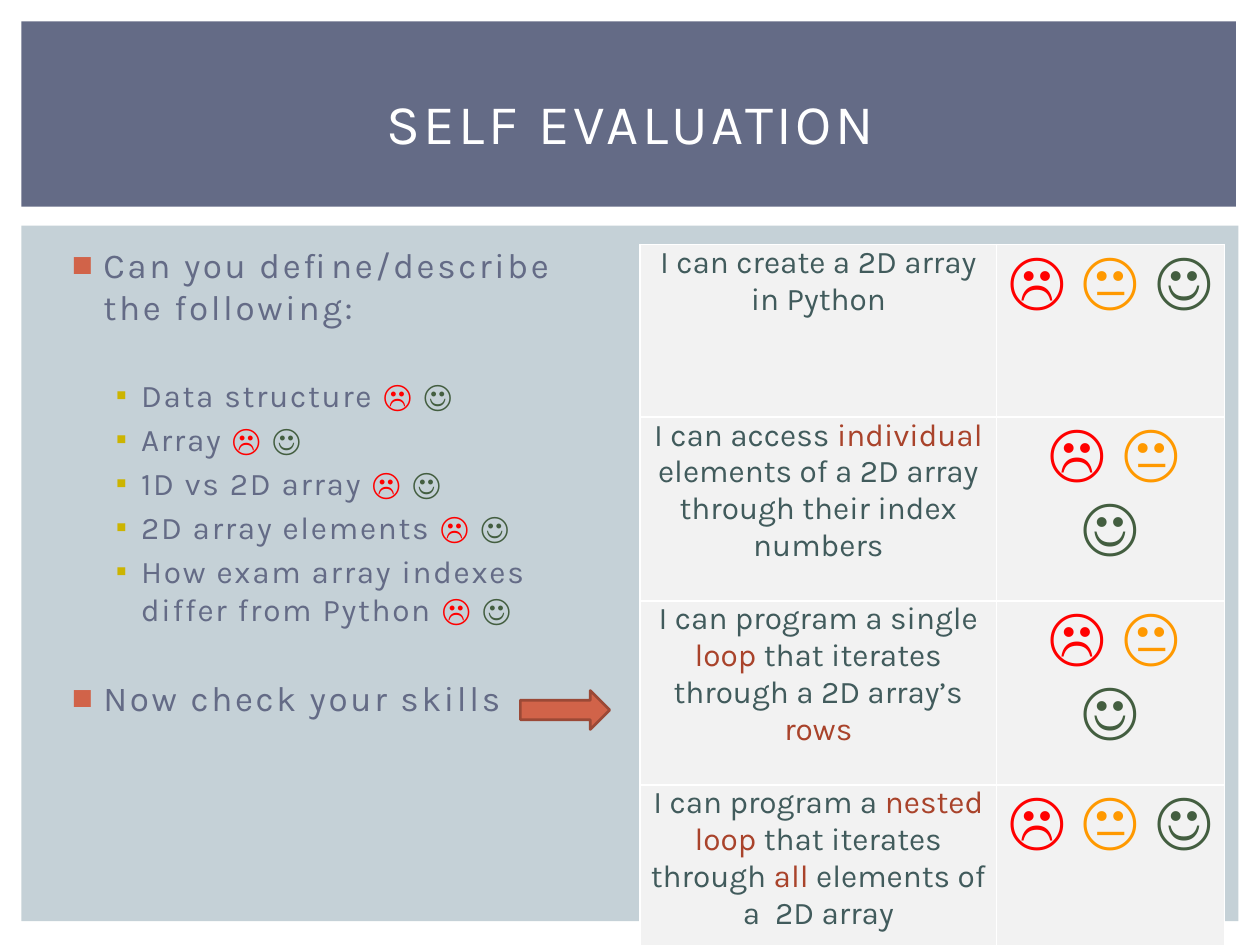
from lxml.etree import SubElement
from pptx import Presentation
from pptx.dml.color import RGBColor
from pptx.enum.shapes import MSO_SHAPE as Shape
from pptx.enum.text import MSO_ANCHOR as Anchor, MSO_AUTO_SIZE as AutoSize, PP_ALIGN as Align
from pptx.oxml.ns import qn
from pptx.util import Inches, Pt

SLATE, MIST, WHITE = "646B86", "C5D1D7", "FFFFFF"
RUST, OLIVE, TEAL, BRICK = "D16349", "CCB400", "415B5C", "A9432B"
RED, AMBER, GREEN = "FF0000", "FF9900", "435E40"


def paint(target, color):
    """Give a fill, or a font or line, a solid colour."""
    if hasattr(target, "solid"):
        target.solid()
        target = target.fore_color
    else:
        target = target.color
    target.rgb = RGBColor.from_string(color)


def write(para, spans, size, spacing=0):
    """Add (text, colour, bold) spans to a paragraph."""
    for text, color, bold in spans:
        span = para.add_run()
        span.text = text
        for name, value in {"name": "Karla", "size": Pt(size), "bold": bold}.items():
            setattr(span.font, name, value)
        paint(span.font, color)
        if spacing:
            span.font._element.set("spc", str(int(spacing * 100)))


deck = Presentation()
deck.slide_width, deck.slide_height = Inches(10), Inches(7.5)
page = deck.slides.add_slide(deck.slide_layouts[1])
title, body = page.placeholders

# Background panels, behind the placeholders
for top, width, height, color in [(1.79, 9.66, 5.52, MIST), (0.17, 9.64, 1.47, SLATE)]:
    panel = page.shapes.add_shape(Shape.RECTANGLE, Inches(0.17), Inches(top),
                                  Inches(width), Inches(height))
    panel.shadow.inherit = False
    paint(panel.fill, color)
    panel.line.fill.background()

# Title and list placeholders
for box, place, anchor in [(body, (0.42, 1.88, 4.35, 4.82), Anchor.TOP),
                           (title, (0.42, 0.39, 9.17, 1.15), Anchor.MIDDLE)]:
    box.left, box.top, box.width, box.height = map(Inches, place)
    frame = box.text_frame
    for name, value in {"word_wrap": True, "auto_size": AutoSize.NONE,
                        "vertical_anchor": anchor}.items():
        setattr(frame, name, value)
    page.shapes._spTree.append(box._element)

heading = title.text_frame.paragraphs[0]
heading.alignment = Align.CENTER
write(heading, [("SELF EVALUATION", WHITE, False)], 32, 2)

# Bulleted list: text, level, points before, points after
levels = [
    {"size": 20, "spacing": 1.5, "margin": 0.3, "hang": 0.25, "mark": "■", "color": RUST},
    {"size": 18, "spacing": 1, "margin": 0.6, "hang": 0.2, "mark": "▪", "color": OLIVE},
]
topics = ["Data structure ", "Array ", "1D vs 2D array ", "2D array elements ",
          "How exam array indexes differ from Python "]
items = [("Can you define/describe the following:", 0, 4, 24)]
items += [(topic, 1, 3.6, 0) for topic in topics]
items += [("Now check your skills", 0, 28, 0)]

for number, (text, depth, before, after) in enumerate(items):
    frame = body.text_frame
    para = frame.add_paragraph() if number else frame.paragraphs[0]
    style = levels[depth]
    for name, value in {"level": depth, "space_before": Pt(before),
                        "space_after": Pt(after)}.items():
        setattr(para, name, value)
    spans = [(text, SLATE, False)]
    if depth:
        spans += [("☹ ", RED, True), ("☺", GREEN, True)]
    write(para, spans, style["size"], style["spacing"])
    props = para._p.get_or_add_pPr()
    props.set("marL", str(Inches(style["margin"])))
    props.set("indent", str(-Inches(style["hang"])))
    SubElement(SubElement(props, qn("a:buClr")), qn("a:srgbClr"), val=style["color"])
    SubElement(props, qn("a:buChar"), char=style["mark"])

# Skills table: plain and highlighted words alternate
skills = [
    ["I can create a 2D array in Python"],
    ["I can access ", "individual", " elements of a 2D array through their index numbers"],
    ["I can program a single ", "loop", " that iterates through a 2D array’s ", "rows"],
    ["I can program a ", "nested loop", " that iterates through ", "all",
     " elements of a  2D array"],
]
faces = [("☹ ", RED, True), ("😐 ", AMBER, True), ("☺", GREEN, True)]
table = page.shapes.add_table(4, 2, Inches(5.08), Inches(1.94),
                              Inches(4.64), Inches(5.59)).table
for column, width in zip(table.columns, [2.83, 1.81]):
    column.width = Inches(width)
for row, height in zip(table.rows, [1.37, 1.46, 1.46, 1.3]):
    row.height = Inches(height)

for number, parts in enumerate(skills):
    words = [(part, BRICK if place % 2 else TEAL, False) for place, part in enumerate(parts)]
    for column, (spans, size) in enumerate([(words, 18), (faces, 36)]):
        cell = table.cell(number, column)
        for name, value in {"margin_left": 0.07, "margin_right": 0.07,
                            "margin_top": 0, "margin_bottom": 0}.items():
            setattr(cell, name, Inches(value))
        para = cell.text_frame.paragraphs[0]
        para.alignment = Align.CENTER
        if column and number in (1, 2):
            write(para, [(" ", "000000", False)], 18)
        write(para, spans, size)
        props = cell._tc.get_or_add_tcPr()
        for side in "LRTB":
            edge = SubElement(props, qn(f"a:ln{side}"), w=str(Pt(1)))
            SubElement(SubElement(edge, qn("a:solidFill")), qn("a:srgbClr"), val=WHITE)
        paint(cell.fill, "F2F2F2")

# Arrow from the list to the table
arrow = page.shapes.add_shape(Shape.RIGHT_ARROW, Inches(4.13), Inches(5.48),
                              Inches(0.71), Inches(0.31))
arrow.shadow.inherit = False
paint(arrow.fill, RUST)
paint(arrow.line, "9B4936")
arrow.line.width = Pt(1.5)

deck.save("out.pptx")
